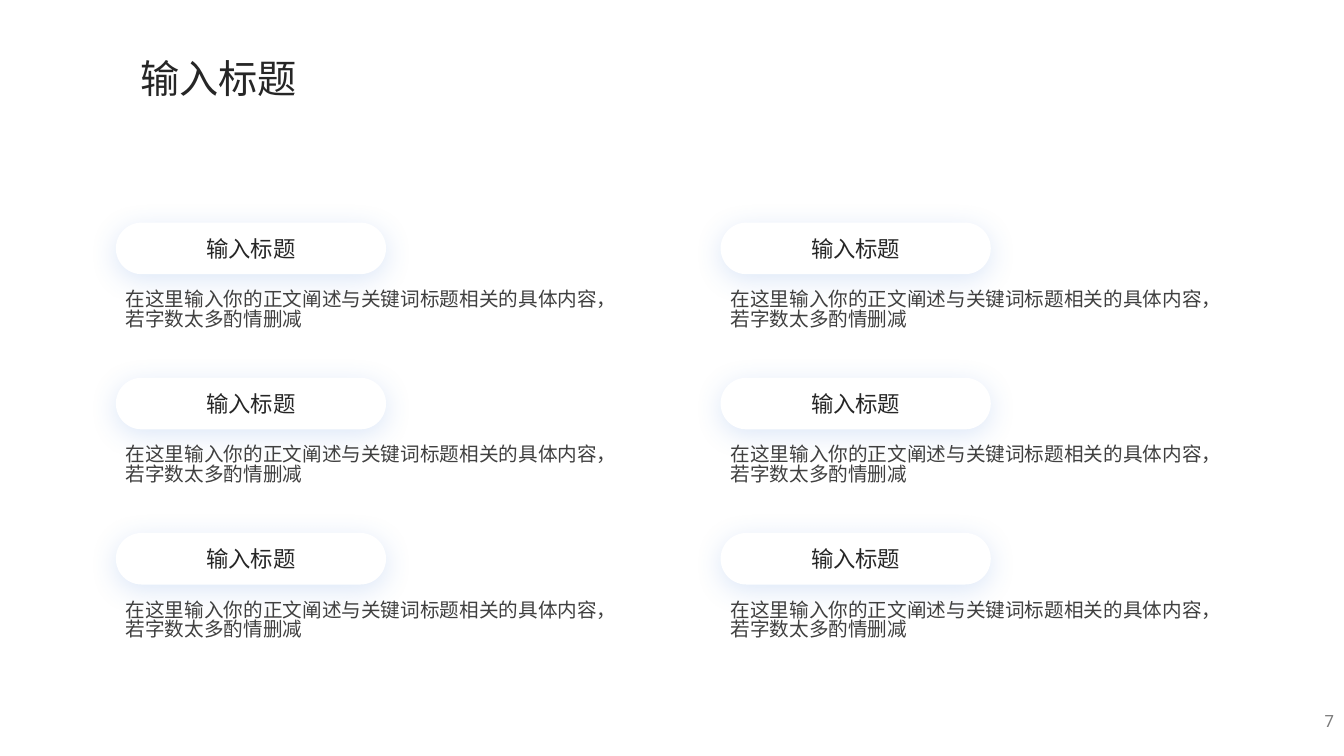
from dataclasses import dataclass
from lxml import etree
from pptx import Presentation
from pptx.dml.color import RGBColor
from pptx.enum import shapes, text
from pptx.oxml import ns
from pptx.util import Cm, Pt


@dataclass(frozen=True)
class Theme:
    white: str = "FFFFFF"
    heading: str = "262626"
    body: str = "404040"
    muted: str = "797979"
    glow: str = "5389DD"
    cjk: str = "Noto Sans CJK SC"
    latin: str = "Roboto"
    title_size: int = 28
    label_size: int = 16
    body_size: int = 14
    number_size: int = 12


theme = Theme()


def write(sp, words, size, color, font=theme.cjk, align=text.PP_ALIGN.LEFT,
          anchor=text.MSO_ANCHOR.TOP, wrap=True, spacing=None):
    tf = sp.text_frame
    tf.text = words
    tf.word_wrap = wrap
    tf.vertical_anchor = anchor
    p = tf.paragraphs[0]
    p.alignment = align
    p.line_spacing = spacing
    r = p.runs[0]
    r.font.size = Pt(size)
    r.font.name = font
    r.font.color.rgb = RGBColor.from_string(color)
    ea = etree.SubElement(r.font._element, ns.qn("a:ea"))
    ea.set("typeface", font)


def add_glow(sp):
    sp.shadow.inherit = False
    effects = sp._element.spPr.find(ns.qn("a:effectLst"))
    glow = etree.SubElement(effects, ns.qn("a:outerShdw"), blurRad=str(Pt(20)),
                            dist=str(Pt(4)), dir="5400000", algn="t", rotWithShape="0")
    color = etree.SubElement(glow, ns.qn("a:srgbClr"), val=theme.glow)
    etree.SubElement(color, ns.qn("a:alpha"), val="20000")


prs = Presentation()
prs.slide_width, prs.slide_height = Cm(33.87), Cm(19.05)
s = prs.slides.add_slide(prs.slide_layouts[6])
s.background.fill.solid()
s.background.fill.fore_color.rgb = RGBColor.from_string(theme.white)

title = s.shapes.add_textbox(Cm(3.28), Cm(1.45), Cm(4.5), Cm(1.45))
write(title, "输入标题", theme.title_size, theme.heading, wrap=False, spacing=0.83)

left, top = 2.92, 5.61
column_step, row_step = 15.24, 3.91
for row in range(3):
    for column in range(2):
        x, y = left + column * column_step, top + row * row_step
        pill = s.shapes.add_shape(shapes.MSO_SHAPE.ROUNDED_RECTANGLE,
                                  Cm(x), Cm(y), Cm(6.81), Cm(1.3))
        pill.adjustments[0] = 0.5
        pill.fill.solid()
        pill.fill.fore_color.rgb = RGBColor.from_string(theme.white)
        pill.line.fill.background()
        add_glow(pill)
        write(pill, "输入标题", theme.label_size, theme.heading,
              align=text.PP_ALIGN.CENTER, anchor=text.MSO_ANCHOR.MIDDLE)
        detail = s.shapes.add_textbox(Cm(x), Cm(y + 1.6), Cm(13), Cm(1.45))
        write(detail, "在这里输入你的正文阐述与关键词标题相关的具体内容，若字数太多酌情删减",
              theme.body_size, theme.body, spacing=0.83)

number = s.shapes.add_textbox(Cm(26.25), Cm(17.66), Cm(7.62), Cm(1.01))
write(number, "7", theme.number_size, theme.muted, font=theme.latin,
      align=text.PP_ALIGN.RIGHT, anchor=text.MSO_ANCHOR.MIDDLE)

prs.save("out.pptx")
